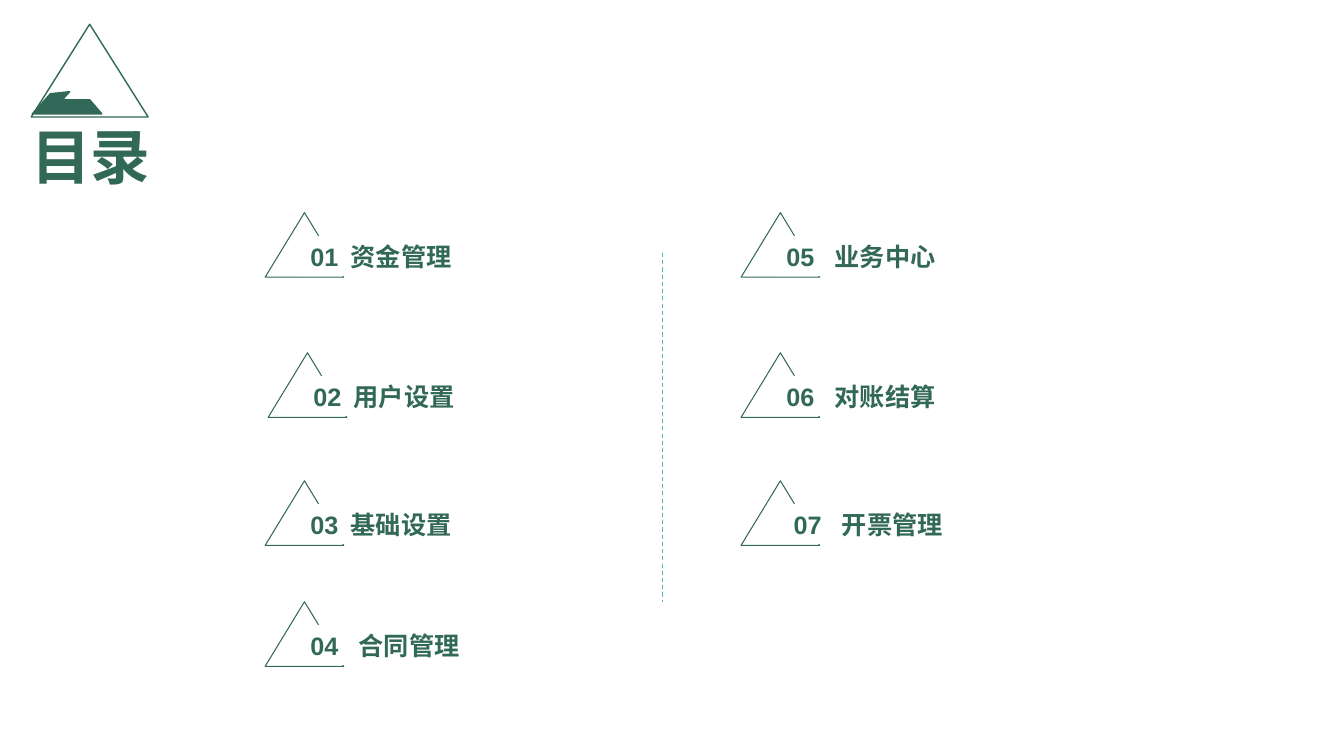
from pptx import Presentation
from pptx.dml.color import RGBColor
from pptx.enum.dml import MSO_LINE
from pptx.enum.shapes import MSO_CONNECTOR, MSO_SHAPE
from pptx.enum.text import MSO_ANCHOR, MSO_AUTO_SIZE, PP_ALIGN
from pptx.oxml.ns import qn
from pptx.util import Inches, Pt
from lxml.etree import SubElement as Sub

COLORS = {"green": "316857", "teal": "58B6C0", "white": "FFFFFF"}
CJK = "Noto Sans CJK SC"

# Number, label, gap to the label, extra indent
LEFT = [("01", "资金管理", 0.4, 0), ("02", "用户设置", 0.4, 0),
        ("03", "基础设置", 0.4, 0), ("04", "合同管理", 0.48, 0)]
RIGHT = [("05", "业务中心", 0.48, 0), ("06", "对账结算", 0.48, 0),
         ("07", "开票管理", 0.48, 0.07)]
ROWS = [2.11, 3.5, 4.77, 5.97]


def color(name):
    return RGBColor.from_string(COLORS[name])


def paint(shape, fill=None, line=None, width=1):
    shape.shadow.inherit = False
    for part, name in ((shape.fill, fill), (shape.line.fill, line)):
        if name:
            part.solid()
            part.fore_color.rgb = color(name)
        else:
            part.background()
    if line:
        shape.line.width = Pt(width)


def style(frame, size, face):
    frame.auto_size = MSO_AUTO_SIZE.NONE
    frame.vertical_anchor = MSO_ANCHOR.MIDDLE
    para = frame.paragraphs[0]
    para.alignment = PP_ALIGN.LEFT
    for run in para.runs:
        font = run.font
        font.size, font.name, font.bold = Pt(size), face, True
        font.color.rgb = color("green")
        Sub(run._r.get_or_add_rPr(), qn("a:ea"), typeface=CJK)


def triangle(shapes, x, y, w, h, width):
    shape = shapes.add_shape(MSO_SHAPE.ISOSCELES_TRIANGLE,
                             Inches(x), Inches(y), Inches(w), Inches(h))
    paint(shape, line="green", width=width)


def header(slide, x, y):
    # Mountain inside the large triangle
    hill = [(0.01, 0.89), (0.19, 0.69), (0.38, 0.67),
            (0.31, 0.75), (0.58, 0.75), (0.7, 0.89)]
    points = [(Inches(x + dx), Inches(y + dy)) for dx, dy in hill]
    build = slide.shapes.build_freeform(*points[0])
    build.add_line_segments(points[1:], close=True)
    paint(build.convert_to_shape(), "green", "green")
    triangle(slide.shapes, x, y, 1.16, 0.92, 1)

    # Title below it
    title = slide.shapes.title
    title.left, title.top = Inches(x - 0.1), Inches(y + 0.89)
    title.width, title.height = Inches(1.4), Inches(0.82)
    frame = title.text_frame
    frame.text = "目录"
    frame.word_wrap = True
    frame.margin_right = 0
    style(frame, 42.6, CJK)


def entry(slide, x, y, num, name, gap, indent):
    group = slide.shapes.add_group_shape()
    triangle(group.shapes, x, y, 0.78, 0.64, 0.75)

    # White label covers the corner of the triangle
    label = group.shapes.add_shape(MSO_SHAPE.RECTANGLE, Inches(x + 0.35),
                                   Inches(y + 0.23), Inches(2.38), Inches(0.4))
    paint(label, "white")
    frame = label.text_frame
    frame.text = f"{num}\t{name}"
    frame.margin_left = Inches(0.1 + indent)
    tabs = Sub(frame.paragraphs[0]._p.get_or_add_pPr(), qn("a:tabLst"))
    Sub(tabs, qn("a:tab"), pos=str(Inches(gap)), algn="l")
    style(frame, 18, "Arial")


def column(slide, x, items):
    for y, item in zip(ROWS, items):
        # The second entry on the left sits slightly inward
        shift = 0.03 if item[0] == "02" else 0
        entry(slide, x + shift, y, *item)


def divider(slide, x, top, bottom):
    rule = slide.shapes.add_connector(MSO_CONNECTOR.STRAIGHT, Inches(x),
                                      Inches(top), Inches(x), Inches(bottom))
    rule.line.color.rgb = color("teal")
    rule.line.width = Pt(0.75)
    rule.line.dash_style = MSO_LINE.DASH
    Sub(rule._element.spPr, qn("a:effectLst"))


def main():
    prs = Presentation()
    prs.slide_width, prs.slide_height = Inches(13.33), Inches(7.5)
    slide = prs.slides.add_slide(prs.slide_layouts[5])
    header(slide, 0.31, 0.24)
    divider(slide, 6.57, 2.51, 5.97)
    column(slide, 2.63, LEFT)
    column(slide, 7.35, RIGHT)
    prs.save("out.pptx")


if __name__ == "__main__":
    main()
